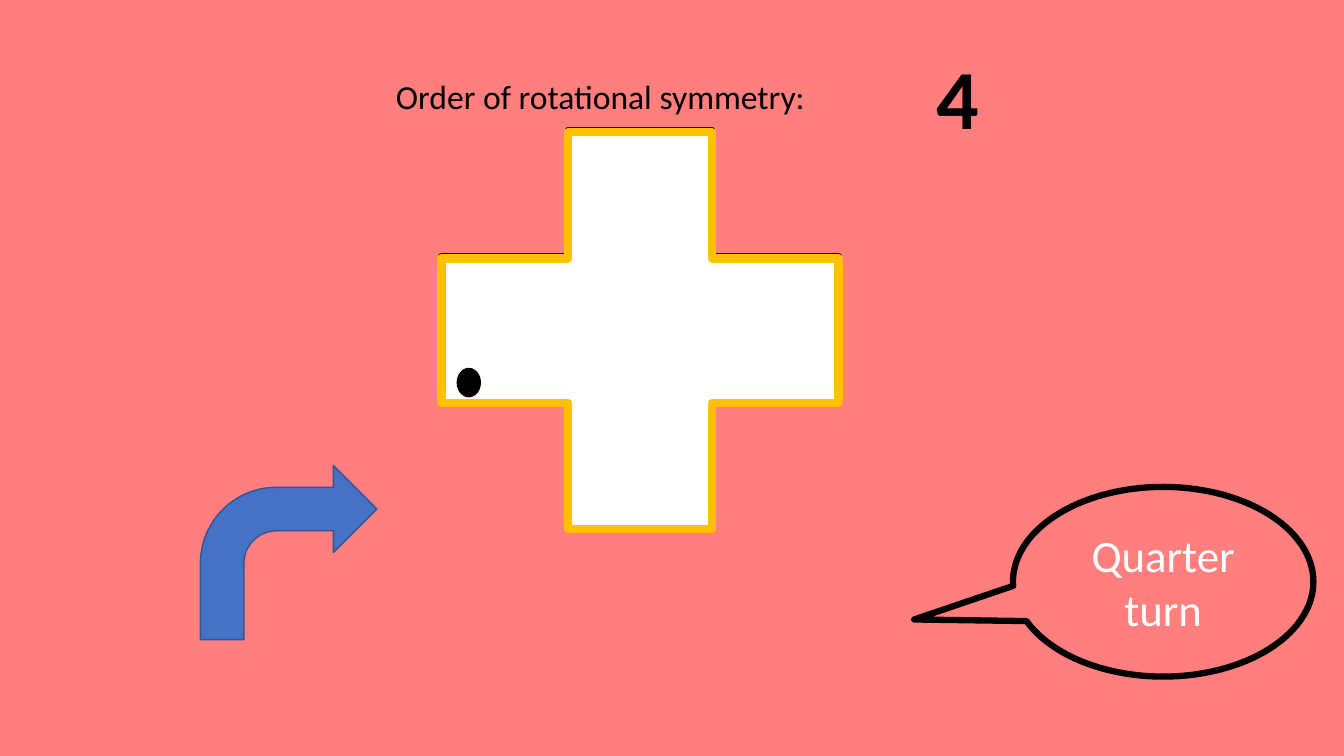
from pptx import Presentation
from pptx.dml.color import RGBColor
from pptx.enum.shapes import MSO_SHAPE as Preset
from pptx.enum.text import MSO_ANCHOR as Anchor, PP_ALIGN as Align
from pptx.util import Cm, Pt

BLACK, WHITE, GOLD = "000000", "FFFFFF", "FFC000"
BACKDROP, BLUE, DARK_BLUE = "FF7F7F", "4472C4", "325491"


def color(hex_string):
    return RGBColor.from_string(hex_string)


def write(holder, words, size, ink, **formats):
    """Put one formatted line of words into a shape or text box."""
    frame = holder.text_frame
    frame.word_wrap = True
    paragraph = frame.paragraphs[0]
    run = paragraph.add_run()
    run.text = words
    run.font.color.rgb = color(ink)
    for key, value in {"name": "Calibri", "size": Pt(size), **formats}.items():
        setattr(run.font, key, value)
    return frame, paragraph


def draw(shapes, preset, box, fill, line, weight, adjust=(), turn=0):
    """Add a preset shape in a box of left, top, width, height in cm."""
    figure = shapes.add_shape(preset, *map(Cm, box))
    figure.shadow.inherit = False
    figure.rotation = turn
    for index, value in enumerate(adjust):
        figure.adjustments[index] = value
    if fill:
        figure.fill.solid()
        figure.fill.fore_color.rgb = color(fill)
    else:
        figure.fill.background()
    figure.line.color.rgb = color(line)
    figure.line.width = Pt(weight)
    return figure


def add_heading(slide, left, top, width, height):
    # Question on the left, answer in large type on the right
    answer_width = 2.69
    question_width = width - answer_width
    question = slide.shapes.add_textbox(
        Cm(left), Cm(top + 0.76), Cm(question_width), Cm(1.27))
    write(question, "Order of rotational symmetry:", 24, BLACK)
    answer = slide.shapes.add_textbox(
        Cm(left + question_width), Cm(top), Cm(answer_width), Cm(height))
    write(answer, "4", 60, BLACK, bold=True)


def add_cross(slide, left, top, side):
    # Fixed outline behind the turning cross
    arm = [0.318]
    draw(slide.shapes, Preset.CROSS, (left, top, side, side),
         WHITE, BLACK, 4.5, arm)
    # Cross and marker dot turn together
    turning = slide.shapes.add_group_shape().shapes
    draw(turning, Preset.CROSS, (left, top + 0.05, side, side),
         WHITE, GOLD, 6, arm, turn=270)
    draw(turning, Preset.OVAL, (left + 0.33, top + 6.07, 0.71, 0.58),
         BLACK, BLACK, 1, turn=270)


def add_turn_callout(slide, *box):
    callout = draw(slide.shapes, Preset.OVAL_CALLOUT, box,
                   None, BLACK, 4.5, [-0.829, 0.199])
    frame, paragraph = write(callout, "Quarter turn", 32, WHITE)
    frame.vertical_anchor = Anchor.MIDDLE
    paragraph.alignment = Align.CENTER


def add_turn_arrow(slide, *box):
    draw(slide.shapes, Preset.BENT_ARROW, box, BLUE, DARK_BLUE, 1)


def main():
    deck = Presentation()
    deck.slide_width, deck.slide_height = Cm(33.87), Cm(19.05)
    slide = deck.slides.add_slide(deck.slide_layouts[6])
    slide.background.fill.solid()
    slide.background.fill.fore_color.rgb = color(BACKDROP)

    add_heading(slide, 9.73, 1.02, 16.3, 2.82)
    add_cross(slide, 11.13, 3.28, 10)
    add_turn_callout(slide, 25.53, 12.27, 7.57, 4.78)
    add_turn_arrow(slide, 5.05, 11.73, 4.45, 4.39)
    deck.save("out.pptx")


if __name__ == "__main__":
    main()
